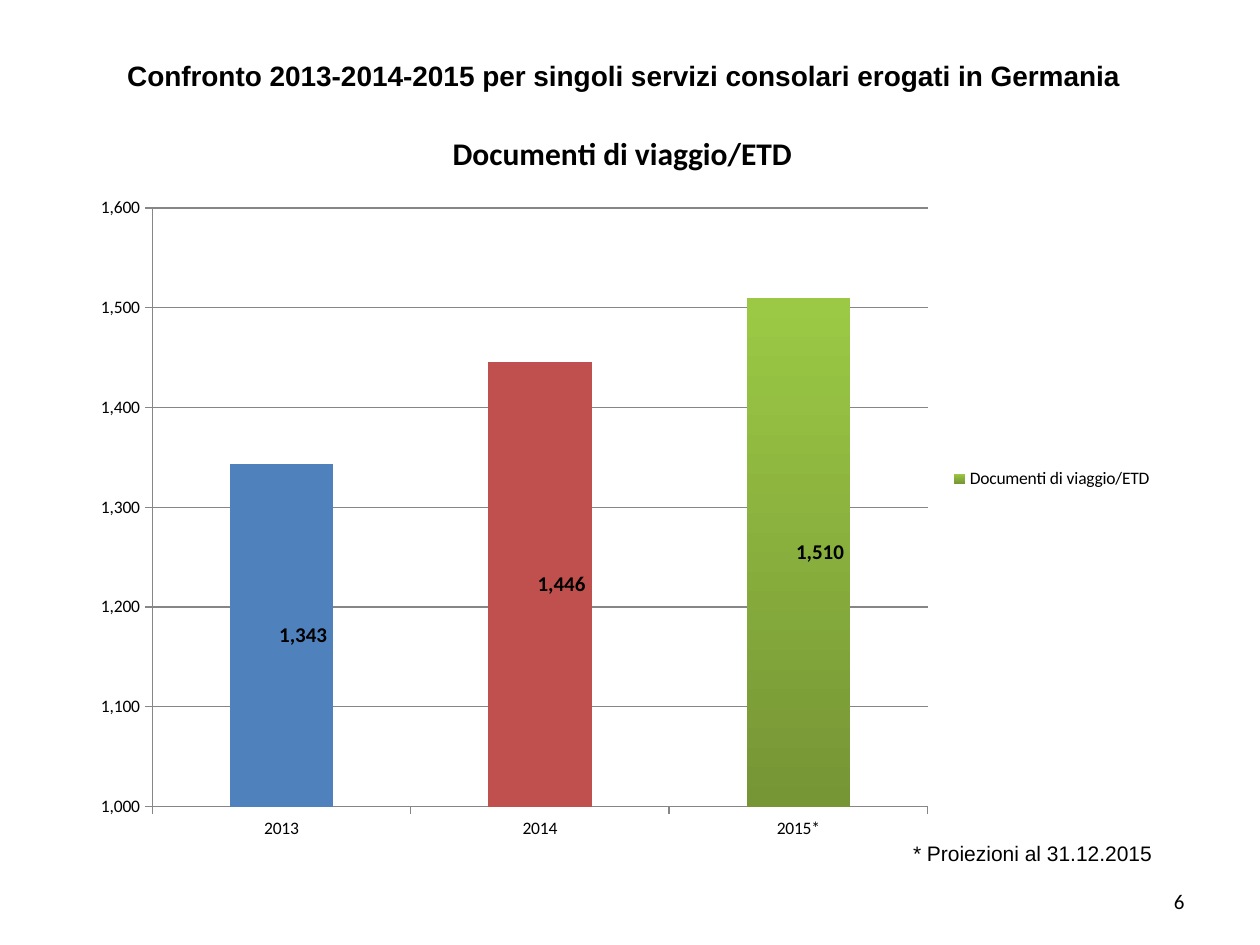
from lxml import etree
from pptx import Presentation
from pptx.chart.data import CategoryChartData
from pptx.dml.color import RGBColor
from pptx.enum.chart import XL_CHART_TYPE, XL_LABEL_POSITION, XL_LEGEND_POSITION, XL_TICK_MARK
from pptx.enum.text import MSO_ANCHOR, PP_ALIGN
from pptx.oxml.ns import qn
from pptx.util import Pt

STACKED = XL_CHART_TYPE.COLUMN_STACKED
LABEL_CENTER = XL_LABEL_POSITION.CENTER
LEGEND_RIGHT = XL_LEGEND_POSITION.RIGHT
TICK_OUT = XL_TICK_MARK.OUTSIDE
TOP, MIDDLE = MSO_ANCHOR.TOP, MSO_ANCHOR.MIDDLE
CENTER, RIGHT = PP_ALIGN.CENTER, PP_ALIGN.RIGHT

BLACK = RGBColor(0x00, 0x00, 0x00)
GRAY = RGBColor(0x86, 0x86, 0x86)
BLUE = RGBColor(0x4F, 0x81, 0xBD)
RED = RGBColor(0xC0, 0x50, 0x4D)
DARK_GREEN = RGBColor(0x76, 0x95, 0x35)
LIGHT_GREEN = RGBColor(0x9B, 0xC9, 0x45)


def write(shape, text, font, size, align, anchor=TOP, bold=False):
    tf = shape.text_frame
    tf.word_wrap = True
    tf.vertical_anchor = anchor
    p = tf.paragraphs[0]
    p.alignment = align
    r = p.add_run()
    r.text = text
    r.font.name = font
    r.font.size = Pt(size)
    r.font.bold = bold
    r.font.color.rgb = BLACK


def manual_layout(**values):
    layout = etree.Element(qn("c:layout"))
    manual = etree.SubElement(layout, qn("c:manualLayout"))
    for tag, value in values.items():
        etree.SubElement(manual, qn(f"c:{tag}")).set("val", str(value))
    return layout


prs = Presentation()
prs.slide_width, prs.slide_height = Pt(720), Pt(540)
s = prs.slides.add_slide(prs.slide_layouts[5])

# Title
title = s.shapes.title
title.left, title.top, title.width, title.height = Pt(5), Pt(30), Pt(703), Pt(27)
write(title, "Confronto 2013-2014-2015 per singoli servizi consolari erogati in Germania",
      "Arial", 16, CENTER, bold=True)

# Column chart
data = CategoryChartData(number_format="#,##0")
data.categories = ["2013", "2014", "2015*"]
data.add_series("Documenti di viaggio/ETD", [1343, 1446, 1510])
chart = s.shapes.add_chart(STACKED, Pt(45.4), Pt(59.8), Pt(620.6), Pt(427.7), data).chart
chart.font.name = "Calibri"
chart.font.size = Pt(10)
chart.font.color.rgb = BLACK

chart.has_title = True
r = chart.chart_title.text_frame.paragraphs[0].add_run()
r.text = "Documenti di viaggio/ETD"
r.font.name = "Calibri"
r.font.size = Pt(18)
r.font.bold = True
r.font.color.rgb = BLACK

chart.has_legend = True
chart.legend.position = LEGEND_RIGHT
chart.legend.include_in_layout = False

# Axes and plot area
value_axis = chart.value_axis
value_axis.minimum_scale, value_axis.maximum_scale = 1000, 1600
value_axis.major_unit = 100
value_axis.tick_labels.number_format = "#,##0"
value_axis.tick_labels.number_format_is_linked = False
value_axis.has_major_gridlines = True
for axis in (value_axis, chart.category_axis):
    axis.major_tick_mark = TICK_OUT
for part in (value_axis, chart.category_axis, value_axis.major_gridlines):
    part.format.line.color.rgb = GRAY
    part.format.line.width = Pt(0.75)

plot_area = chart.element.find(".//" + qn("c:plotArea"))
for layout in plot_area.findall(qn("c:layout")):
    plot_area.remove(layout)
plot_area.insert(0, manual_layout(layoutTarget="inner", xMode="edge", yMode="edge",
                                  x=0.067, y=0.138, w=0.714, h=0.8))

# Columns: green gradient for the series, plain colours for the first two years
plot = chart.plots[0]
plot.gap_width, plot.overlap = 150, 100
plot.vary_by_categories = False
series = plot.series[0]
fill = series.format.fill
fill.gradient()
fill.gradient_angle = 90
for stop, color, position in zip(fill.gradient_stops, (DARK_GREEN, LIGHT_GREEN), (0, 1)):
    stop.color.rgb = color
    stop.position = position
for i, color in enumerate((BLUE, RED)):
    point_fill = series.points[i].format.fill
    point_fill.solid()
    point_fill.fore_color.rgb = color

# Value labels, moved to the right of each column's centre
labels = series.data_labels
labels.show_value = True
labels.number_format = "#,##0"
labels.number_format_is_linked = False
point_labels = [series.points[i].data_label for i in range(3)]
for label in point_labels:
    label.position = LABEL_CENTER
for label in [labels] + point_labels:
    label.font.name = "Calibri"
    label.font.size = Pt(12)
    label.font.bold = True
    label.font.color.rgb = BLACK
for label in chart.element.iter(qn("c:dLbl")):
    label.insert(1, manual_layout(x=0.02, y=0))

# Footnote and page number
note = s.shapes.add_textbox(Pt(513.4), Pt(476.6), Pt(153.4), Pt(21.6))
write(note, "* Proiezioni al 31.12.2015", "Arial", 12, CENTER)
number = s.shapes.add_textbox(Pt(516), Pt(500.4), Pt(168), Pt(28.8))
write(number, "6", "Calibri", 12, RIGHT, MIDDLE)

prs.save("out.pptx")
